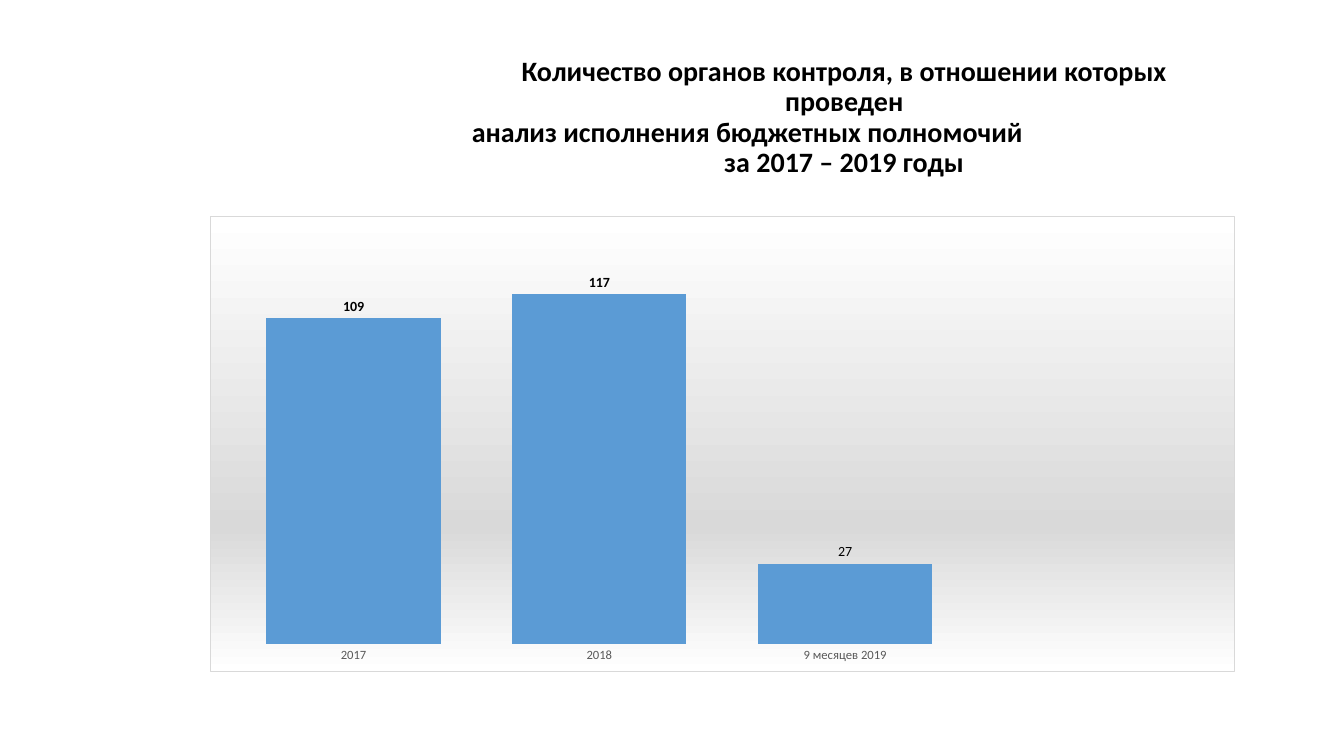
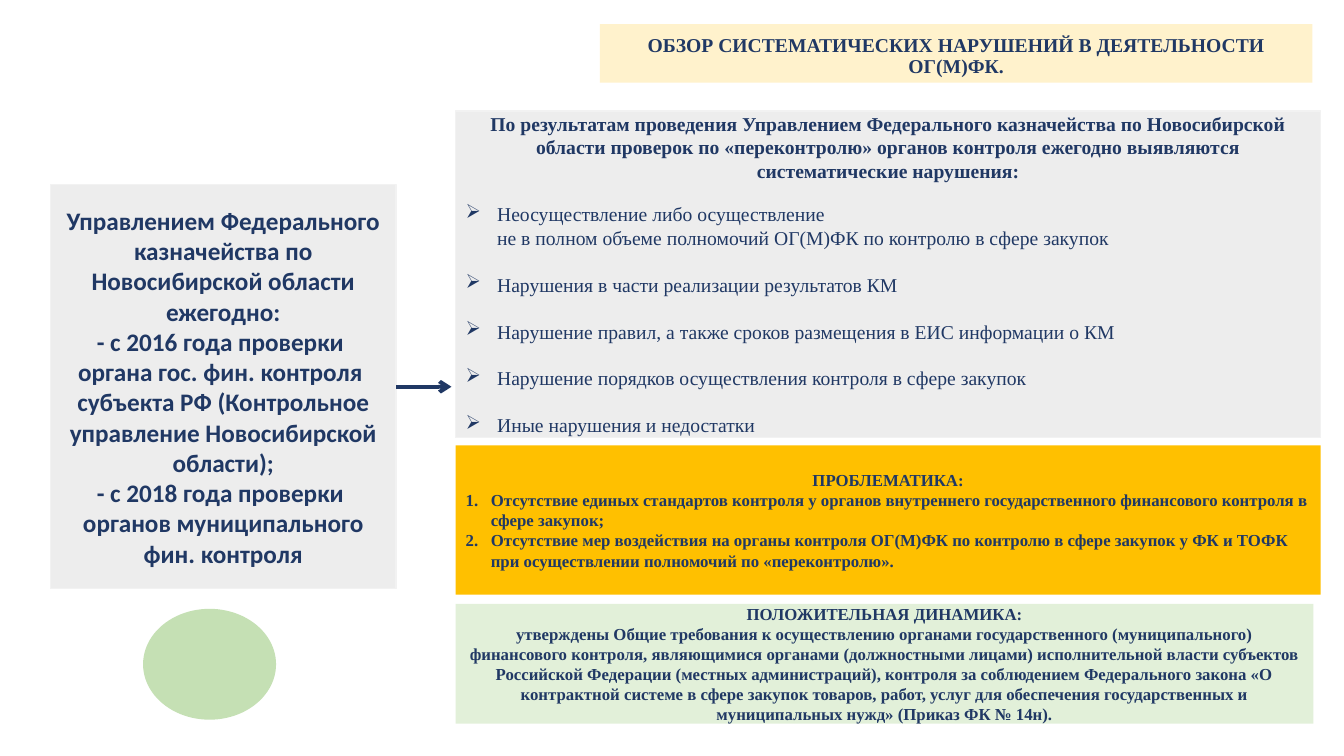
from copy import deepcopy

from lxml import etree
from pptx import Presentation
from pptx.chart.data import CategoryChartData
from pptx.dml.color import RGBColor
from pptx.enum.chart import XL_CHART_TYPE, XL_LABEL_POSITION, XL_TICK_MARK
from pptx.enum.shapes import MSO_CONNECTOR, MSO_SHAPE
from pptx.enum.text import MSO_ANCHOR, MSO_AUTO_SIZE, PP_ALIGN
from pptx.oxml import parse_xml
from pptx.oxml.ns import nsdecls, qn
from pptx.util import Pt

RECT, OVAL = MSO_SHAPE.RECTANGLE, MSO_SHAPE.OVAL
LEFT, CENTER = PP_ALIGN.LEFT, PP_ALIGN.CENTER
MIDDLE, BOTTOM = MSO_ANCHOR.MIDDLE, MSO_ANCHOR.BOTTOM
COLUMNS, STRAIGHT = XL_CHART_TYPE.COLUMN_CLUSTERED, MSO_CONNECTOR.STRAIGHT
OUTSIDE_END, NO_TICK = XL_LABEL_POSITION.OUTSIDE_END, XL_TICK_MARK.NONE

BLACK, NAVY, BLUE = "000000", "203864", "5B9BD5"
GRAY, PALE_GRAY, DARK_GRAY = "EDEDED", "F2F2F2", "595959"
CREAM, GOLD, MINT, GREEN = "FFF2CC", "FFC000", "E2F0D9", "C5E0B4"
SANS, SERIF = "Calibri", "Times New Roman"


def rgb(value):
    return RGBColor.from_string(value)


def set_font(font, size, color, name=SANS, bold=False):
    font.name, font.size, font.bold = name, Pt(size), bold
    font.color.rgb = rgb(color)


def write(tf, text, size=14, color=NAVY, name=SERIF, bold=True, align=CENTER,
          before=0, spacing=1.0, bullet=None, indent=0):
    """Fill the empty first paragraph, or add one; a newline is a line break."""
    first = tf.paragraphs[0]
    p = tf.add_paragraph() if first.runs else first
    p.text = text
    p.alignment, p.line_spacing = align, spacing
    p.space_before, p.space_after = Pt(before), Pt(0)
    if bullet:
        pPr = p._p.get_or_add_pPr()
        pPr.set("marL", str(Pt(indent)))
        pPr.set("indent", str(-Pt(indent)))
        if bullet == "1.":
            etree.SubElement(pPr, qn("a:buAutoNum"), type="arabicPeriod")
        else:
            etree.SubElement(pPr, qn("a:buChar"), char=bullet)
    for r in p.runs:
        set_font(r.font, size, color, name, bold)
    for br in p._p.findall(qn("a:br")):
        br.append(deepcopy(p.runs[0]._r.rPr))


class Deck:
    def __init__(self):
        self.prs = Presentation()
        self.prs.slide_width, self.prs.slide_height = Pt(960), Pt(540)
        self.s = None

    def new_slide(self):
        self.s = self.prs.slides.add_slide(self.prs.slide_layouts[5])

    def title(self, x, y, w, h, fill=None):
        sp = self.s.shapes.title
        sp.left, sp.top, sp.width, sp.height = Pt(x), Pt(y), Pt(w), Pt(h)
        if fill:
            sp.fill.solid()
            sp.fill.fore_color.rgb = rgb(fill)
        tf = sp.text_frame
        tf.word_wrap, tf.auto_size = True, MSO_AUTO_SIZE.NONE
        tf.vertical_anchor = BOTTOM
        return tf

    def panel(self, x, y, w, h, fill, line=None, kind=RECT):
        sp = self.s.shapes.add_shape(kind, Pt(x), Pt(y), Pt(w), Pt(h))
        sp.shadow.inherit = False
        sp.fill.solid()
        sp.fill.fore_color.rgb = rgb(fill)
        if line:
            sp.line.color.rgb = rgb(line)
            sp.line.width = Pt(1)
        else:
            sp.line.fill.background()
        sp.text_frame.word_wrap = True
        sp.text_frame.vertical_anchor = MIDDLE
        return sp

    def arrow_from(self, sp, length):
        """Arrow to the right from the middle of the shape's right side."""
        x, y = sp.left + sp.width, sp.top + sp.height // 2
        c = self.s.shapes.add_connector(STRAIGHT, x, y, x + Pt(length), y)
        c.begin_connect(sp, 3)
        c.line.color.rgb = rgb(NAVY)
        c.line.width = Pt(2.75)
        etree.SubElement(c.line._get_or_add_ln(), qn("a:tailEnd"), type="arrow")
        etree.SubElement(c._element.spPr, qn("a:effectLst"))

    def column_chart(self, x, y, w, h, cats, name, values, top, plain_label):
        data = CategoryChartData()
        data.categories = cats
        data.add_series(name, values)
        chart = self.s.shapes.add_chart(
            COLUMNS, Pt(x), Pt(y), Pt(w), Pt(h), data).chart
        set_font(chart.font, 10, BLACK)
        chart.has_title = chart.has_legend = False

        # Axes
        val, cat = chart.value_axis, chart.category_axis
        val.minimum_scale, val.maximum_scale = 0, top
        val.has_major_gridlines = val.visible = False
        cat.major_tick_mark = cat.minor_tick_mark = NO_TICK
        cat.format.line.fill.background()
        set_font(cat.tick_labels.font, 9, DARK_GRAY)

        # Columns and their labels
        plot = chart.plots[0]
        plot.gap_width, plot.vary_by_categories = 41, False
        series = plot.series[0]
        series.format.fill.solid()
        series.format.fill.fore_color.rgb = rgb(BLUE)
        labels = series.data_labels
        labels.show_value, labels.position = True, OUTSIDE_END
        set_font(labels.font, 10, BLACK, bold=True)
        label = series.points[plain_label].data_label
        set_font(label.font, 10, BLACK)
        label.position = OUTSIDE_END

        # Plot position and chart background
        area = chart.element.find(qn("c:chart")).find(qn("c:plotArea"))
        for old in area.findall(qn("c:layout")):
            area.remove(old)
        area.insert(0, parse_xml(
            f'<c:layout {nsdecls("c")}><c:manualLayout>'
            '<c:layoutTarget val="inner"/><c:xMode val="edge"/>'
            '<c:yMode val="edge"/><c:x val="0.02"/><c:y val="0.02"/>'
            '<c:w val="0.96"/><c:h val="0.92"/>'
            '</c:manualLayout></c:layout>'))
        stops = "".join(
            f'<a:gs pos="{pos}000"><a:srgbClr val="{color}"/></a:gs>'
            for pos, color in ((0, "FFFFFF"), (68, "D9D9D9"), (100, "FFFFFF")))
        chart.element.find(qn("c:chart")).addnext(parse_xml(
            f'<c:spPr {nsdecls("c", "a")}><a:gradFill><a:gsLst>{stops}</a:gsLst>'
            f'<a:lin ang="5400000" scaled="0"/></a:gradFill><a:ln w="{Pt(0.75)}">'
            '<a:solidFill><a:srgbClr val="D9D9D9"/></a:solidFill></a:ln></c:spPr>'))


def chart_slide(deck):
    deck.new_slide()
    tf = deck.title(329.8, 40.3, 546.5, 90.7)
    for text, align in (
            ("Количество органов контроля, в отношении которых проведен", CENTER),
            ("анализ исполнения бюджетных полномочий", LEFT),
            ("за 2017 – 2019 годы", CENTER)):
        write(tf, text, size=20, color=BLACK, name=SANS, align=align, spacing=0.9)
    deck.column_chart(149.8, 154.1, 732.2, 326.2,
                      ("2017", "2018", "9 месяцев 2019", ""), "Количество",
                      (109, 117, 27, None), top=140, plain_label=2)


def violations_slide(deck):
    deck.new_slide()
    tf = deck.title(428.5, 17.3, 509, 41.8, fill=CREAM)
    write(tf, "ОБЗОР СИСТЕМАТИЧЕСКИХ НАРУШЕНИЙ В ДЕЯТЕЛЬНОСТИ ОГ(М)ФК.",
          spacing=0.9)

    # Yearly inspections
    yearly = deck.panel(36, 132, 247, 288.5, GRAY, PALE_GRAY)
    for text in (
            "Управлением Федерального казначейства по Новосибирской области "
            "ежегодно:",
            "- с 2016 года проверки \nоргана гос. фин. контроля \n"
            "субъекта РФ (Контрольное управление Новосибирской области);",
            "- с 2018 года проверки \nорганов муниципального фин. контроля"):
        write(yearly.text_frame, text, size=18, name=SANS)

    # Violations found
    x, w = 325.5, 617.8
    tf = deck.panel(x, 79.2, w, 233.3, GRAY, PALE_GRAY).text_frame
    write(tf, "По результатам проведения Управлением Федерального казначейства по "
              "Новосибирской области проверок по «переконтролю» органов контроля "
              "ежегодно выявляются систематические нарушения:")
    for i, text in enumerate((
            "Неосуществление либо осуществление \n"
            "не в полном объеме полномочий ОГ(М)ФК по контролю в сфере закупок",
            "Нарушения в части реализации результатов КМ",
            "Нарушение правил, а также сроков размещения в ЕИС информации о КМ",
            "Нарушение порядков осуществления контроля в сфере закупок",
            "Иные нарушения и недостатки")):
        write(tf, text, bold=False, align=LEFT, before=16.7 if i else 14.3,
              bullet="➢", indent=22.5)
    deck.arrow_from(yearly, 39.5)

    # Problems
    tf = deck.panel(x, 318.2, w, 106.6, GOLD).text_frame
    write(tf, "ПРОБЛЕМАТИКА:", size=12)
    for text in (
            "Отсутствие единых стандартов контроля у органов внутреннего "
            "государственного финансового контроля в сфере закупок;",
            "Отсутствие мер воздействия на органы контроля ОГ(М)ФК по контролю в "
            "сфере закупок у ФК и ТОФК при осуществлении полномочий по "
            "«переконтролю»."):
        write(tf, text, size=12, align=LEFT, bullet="1.", indent=18)

    # Progress
    tf = deck.panel(x, 431.3, 612.7, 85.7, MINT).text_frame
    for text in (
            "ПОЛОЖИТЕЛЬНАЯ ДИНАМИКА:",
            "утверждены Общие требования к осуществлению органами государственного "
            "(муниципального) финансового контроля, являющимися органами "
            "(должностными лицами) исполнительной власти субъектов Российской "
            "Федерации (местных администраций), контроля за соблюдением "
            "Федерального закона «О контрактной системе в сфере закупок товаров, "
            "работ, услуг для обеспечения государственных и муниципальных нужд» "
            "(Приказ ФК № 14н)."):
        write(tf, text, size=12)
    deck.panel(102.2, 434.9, 95, 79.2, GREEN, kind=OVAL)


def main():
    deck = Deck()
    chart_slide(deck)
    violations_slide(deck)
    deck.prs.save("out.pptx")


if __name__ == "__main__":
    main()
